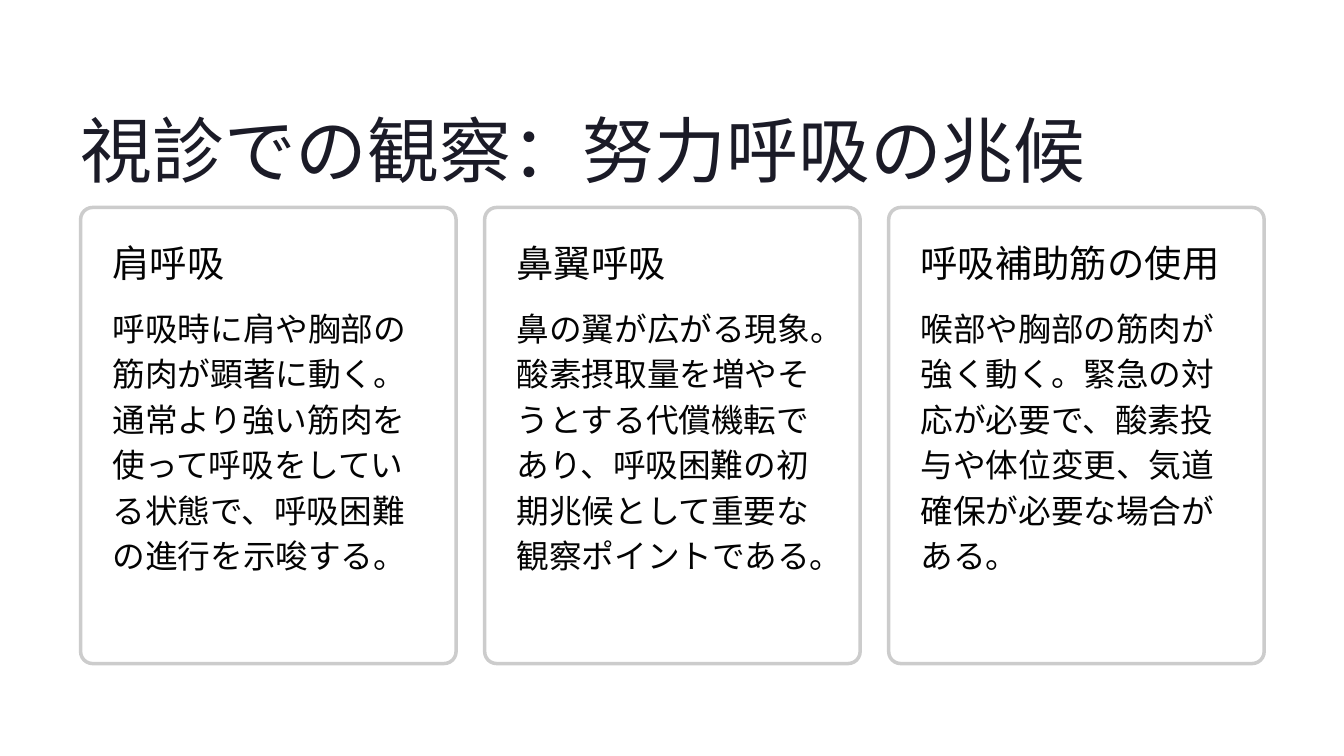
from dataclasses import dataclass

from lxml import etree
from pptx import Presentation
from pptx import util as u
from pptx.dml.color import RGBColor
from pptx.enum import shapes, text
from pptx.oxml import ns


@dataclass(frozen=True)
class Theme:
    title_color = RGBColor.from_string("1B1B27")
    text_color = RGBColor.from_string("030303")
    card_fill = RGBColor.from_string("FFFFFF")
    card_line = RGBColor.from_string("CCCCCC")
    heading_font = "Inter"
    body_font = "Karla"
    title_size = 61.5
    heading_size = 32
    body_size = 28


theme = Theme()

# Grid in inches: three equal cards between the side margins
MARGIN, GAP = 0.96, 0.34
CARD_WIDTH, CARD_TOP, CARD_HEIGHT = 4.47, 2.47, 5.43
PADDING, TEXT_WIDTH = 0.38, 3.7

CARDS = [
    ("肩呼吸",
     "呼吸時に肩や胸部の筋肉が顕著に動く。通常より強い筋肉を使って呼吸をしている状態で、"
     "呼吸困難の進行を示唆する。"),
    ("鼻翼呼吸",
     "鼻の翼が広がる現象。酸素摂取量を増やそうとする代償機転であり、呼吸困難の初期兆候として"
     "重要な観察ポイントである。"),
    ("呼吸補助筋の使用",
     "喉部や胸部の筋肉が強く動く。緊急の対応が必要で、酸素投与や体位変更、気道確保が"
     "必要な場合がある。"),
]

presentation = Presentation()
presentation.slide_width = u.Inches(16)
presentation.slide_height = u.Inches(9)
slide = presentation.slides.add_slide(presentation.slide_layouts[6])


def add_text(content, box, font, size, color, line_spacing, wrap=False):
    frame = slide.shapes.add_textbox(*map(u.Inches, box)).text_frame
    frame.margin_left = frame.margin_right = frame.margin_top = frame.margin_bottom = 0
    frame.word_wrap = wrap
    frame.vertical_anchor = text.MSO_ANCHOR.TOP
    paragraph = frame.paragraphs[0]
    paragraph.alignment = text.PP_ALIGN.LEFT
    paragraph.line_spacing = u.Pt(line_spacing)
    run = paragraph.add_run()
    run.text = content
    run.font.name = font
    run.font.size = u.Pt(size)
    run.font.color.rgb = color


add_text("視診での観察：努力呼吸の兆候", (MARGIN, 1.22, 11.99, 1.07),
         theme.heading_font, theme.title_size, theme.title_color, 77)

for column, (heading, body) in enumerate(CARDS):
    left = MARGIN + column * (CARD_WIDTH + GAP)
    card = slide.shapes.add_shape(
        shapes.MSO_SHAPE.ROUNDED_RECTANGLE,
        *map(u.Inches, (left, CARD_TOP, CARD_WIDTH, CARD_HEIGHT)))
    card.adjustments[0] = 0.032
    card.shadow.inherit = False
    card.fill.solid()
    card.fill.fore_color.rgb = theme.card_fill
    fill_color = card.fill._xPr.find(ns.qn("a:solidFill"))[0]
    etree.SubElement(fill_color, ns.qn("a:alpha"), val="95000")
    card.line.color.rgb = theme.card_line
    card.line.width = u.Pt(3)

    text_left = left + PADDING
    add_text(heading, (text_left, 2.86, TEXT_WIDTH, 0.61),
             theme.heading_font, theme.heading_size, theme.text_color, 38.5)
    add_text(body, (text_left, 3.6, TEXT_WIDTH, 3.72),
             theme.body_font, theme.body_size, theme.text_color, 39, wrap=True)

presentation.save("out.pptx")
